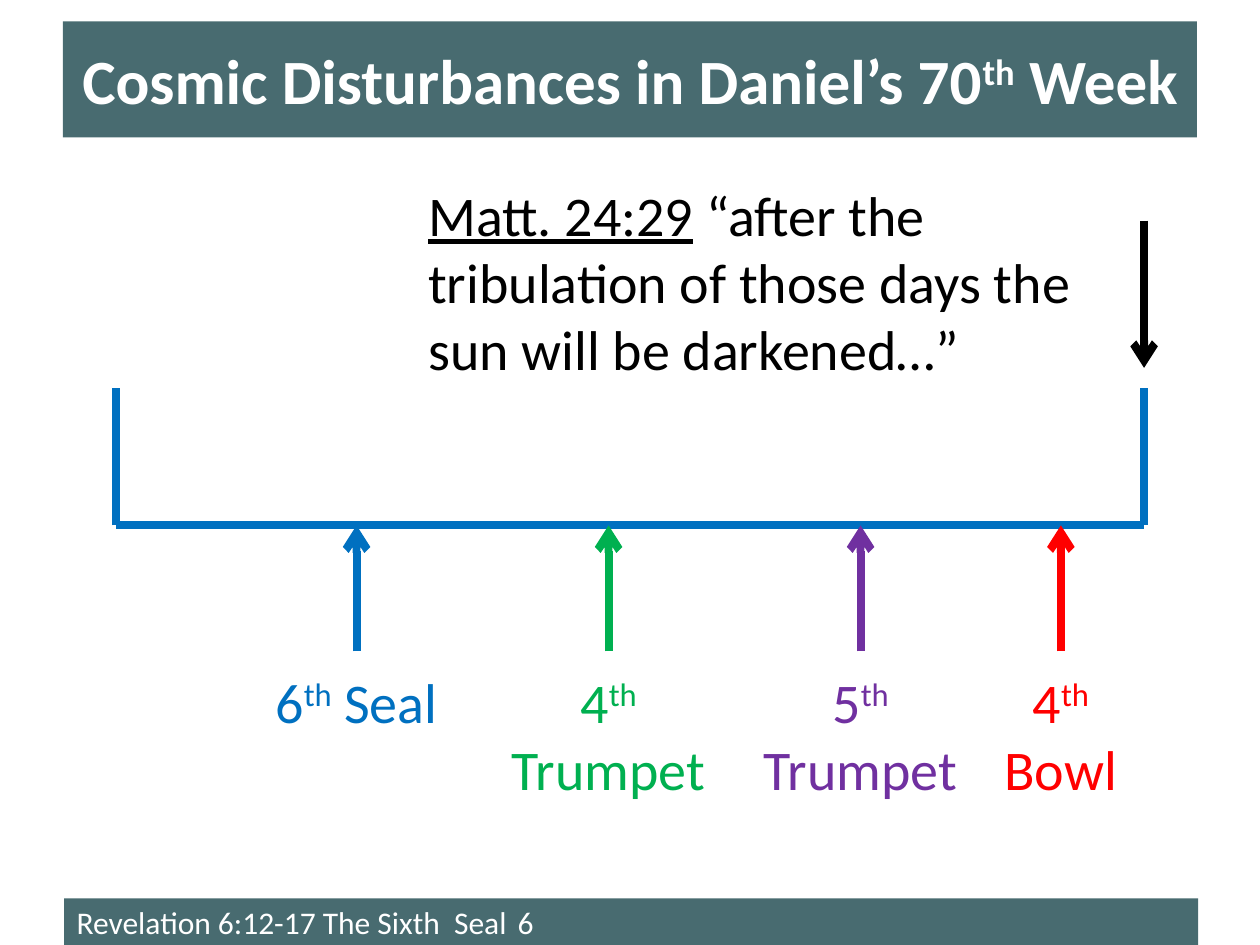
import pptx
import pptx.dml.color
import pptx.enum.shapes
import pptx.enum.text
import pptx.oxml
import pptx.oxml.ns
import pptx.util

Inches = pptx.util.Inches
Pt = pptx.util.Pt
ALIGN = pptx.enum.text.PP_ALIGN
ANCHOR = pptx.enum.text.MSO_ANCHOR
BLUE, TEAL, WHITE, BLACK = "0070C0", "486B70", "FFFFFF", "000000"


def tint(code):
    return pptx.dml.color.RGBColor.from_string(code)


def apply(item, style):
    for name, value in style.items():
        setattr(item, name, value)


def write(frame, runs, size, code, font={}, para={}, anchor=ANCHOR.TOP):
    apply(frame, {"word_wrap": True, "vertical_anchor": anchor})
    line = frame.paragraphs[0]
    apply(line, para)
    for text, extra in runs:
        run = line.add_run()
        run.text = text
        style = {"name": "Calibri", "size": Pt(size), **font}
        for name, value in extra.items():
            if name == "raise":
                run._r.get_or_add_rPr().set("baseline", str(value * 1000))
            else:
                style[name] = value
        apply(run.font, style)
        run.font.color.rgb = tint(code)


def add_band(slide, box, runs, size, font, align):
    band = slide.shapes.add_shape(
        pptx.enum.shapes.MSO_SHAPE.RECTANGLE, *map(Inches, box))
    band.shadow.inherit = False
    band.fill.solid()
    band.fill.fore_color.rgb = tint(TEAL)
    band.line.fill.background()
    write(band.text_frame, runs, size, WHITE, font,
          {"alignment": align}, ANCHOR.MIDDLE)


def add_text(slide, box, runs, code, align):
    text = slide.shapes.add_textbox(*map(Inches, box))
    write(text.text_frame, runs, 32, code,
          para={"alignment": align, "space_before": Pt(4)})


def add_line(slide, start, end, code, arrow=False):
    line = slide.shapes.add_connector(
        pptx.enum.shapes.MSO_CONNECTOR.STRAIGHT, *map(Inches, start + end))
    line.line.width = Pt(4.5)
    line.line.color.rgb = tint(code)
    if arrow:
        tail = pptx.oxml.parse_xml(
            f'<a:tailEnd {pptx.oxml.ns.nsdecls("a")} type="arrow"/>')
        line.line._get_or_add_ln().append(tail)
    line._element.spPr.append(pptx.oxml.parse_xml(
        f'<a:effectLst {pptx.oxml.ns.nsdecls("a")}/>'))


def add_span(slide, box):
    left, top, width, height = box
    right, base = left + width, top + height
    add_line(slide, (left, base), (right, base), BLUE)
    for side in (left, right):
        add_line(slide, (side, base), (side, top), BLUE)


def add_event(slide, box, rank, name, code):
    left, top, width, height = box
    mid = left + width / 2
    add_line(slide, (mid, top + 1), (mid, top), code, True)
    add_text(slide, (left, top + 1.08, width, height - 1.08),
             [(rank, {}), ("th", {"raise": 30}), (" " + name, {})],
             code, ALIGN.CENTER)


def add_verse(slide, box):
    left, top, width, height = box
    add_text(slide, (left, top, 5.59, height),
             [("Matt. 24:29", {"underline": True}),
              (" “after the tribulation of those days the sun will be "
               "darkened…”", {})], BLACK, ALIGN.LEFT)
    right = left + width
    add_line(slide, (right, top + 0.37), (right, top + 1.54), BLACK, True)


def main():
    deck = pptx.Presentation()
    apply(deck, {"slide_width": Inches(10), "slide_height": Inches(7.5)})
    slide = deck.slides.add_slide(deck.slide_layouts[6])
    add_band(slide, (0.51, 7.13, 9, 0.37),
             [("Revelation 6:12-17 The Sixth  Seal\t6", {})],
             18, {}, ALIGN.LEFT)
    add_band(slide, (0.5, 0.17, 9, 0.92),
             [("Cosmic Disturbances in Daniel’s 70", {}),
              ("th", {"raise": 30}), (" Week", {})],
             36, {"bold": True}, ALIGN.CENTER)
    add_span(slide, (0.92, 3.08, 8.16, 1.09))
    events = [(2.83, 1.5, "6", "Seal", BLUE),
              (4.83, 1.99, "4", "Trumpet", "00B050"),
              (6.83, 1.99, "5", "Trumpet", "7030A0"),
              (8.42, 1.3, "4", "Bowl", "FF0000")]
    for mid, width, rank, name, code in events:
        add_event(slide, (mid - width / 2, 4.17, width, 2.26),
                  rank, name, code)
    add_verse(slide, (3.3, 1.38, 5.78, 1.72))
    deck.save("out.pptx")


if __name__ == "__main__":
    main()
